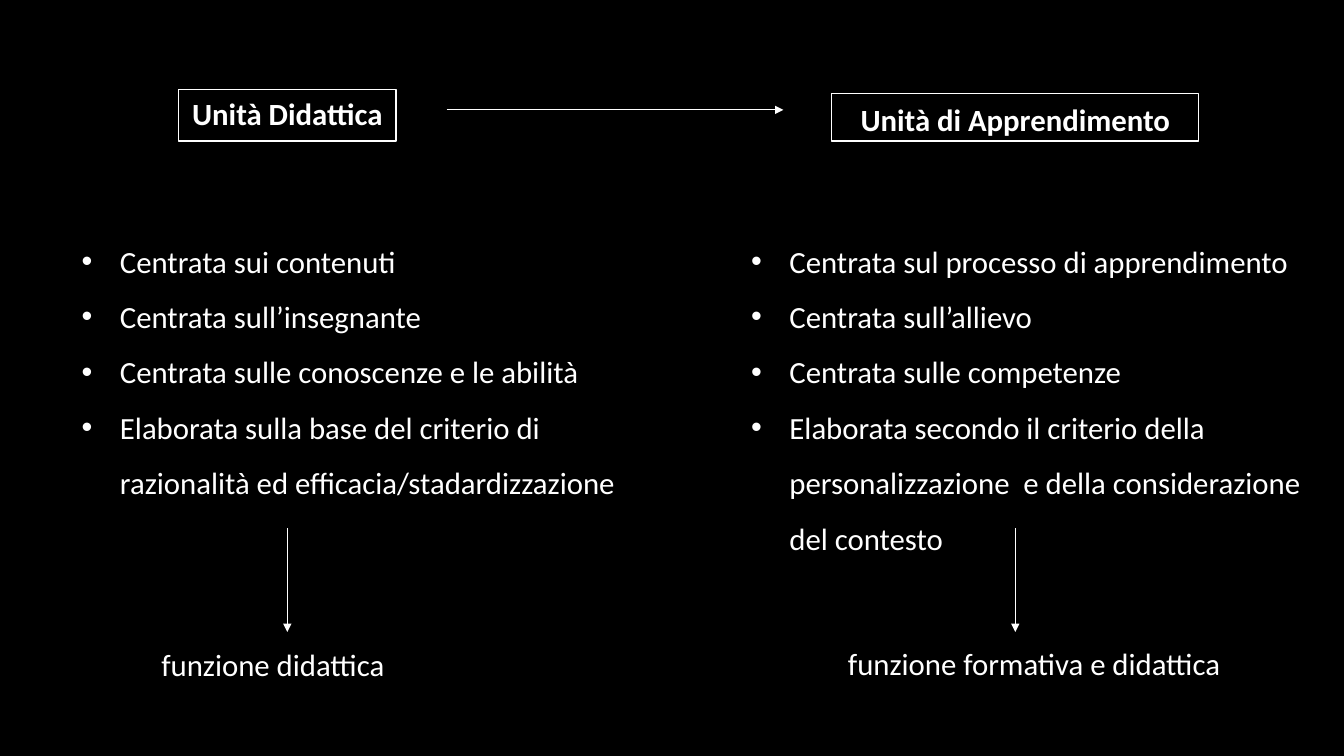
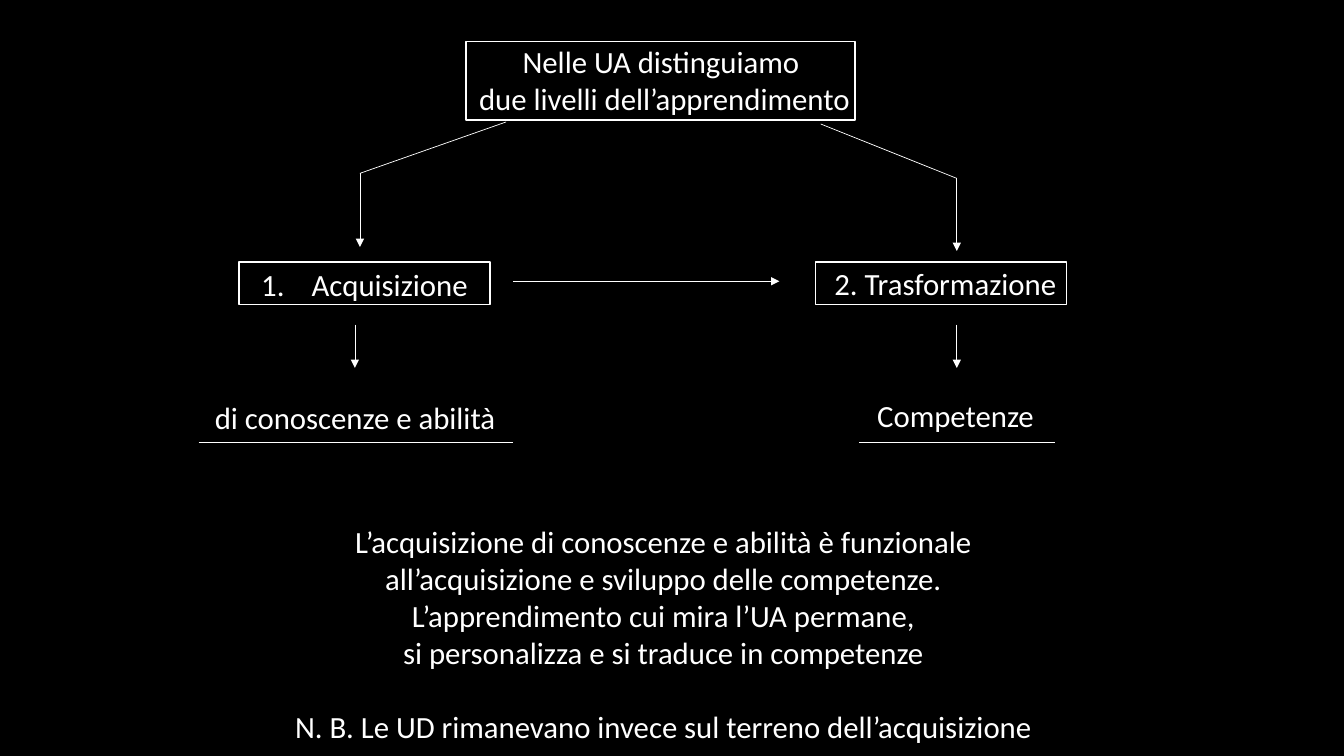
"""Build two slides comparing teaching units with learning units."""
from dataclasses import dataclass
from itertools import pairwise

from lxml.etree import SubElement
from pptx import Presentation
from pptx.dml.color import RGBColor
from pptx.enum.shapes import MSO_CONNECTOR
from pptx.enum.text import MSO_ANCHOR, MSO_AUTO_SIZE, PP_ALIGN
from pptx.oxml.ns import qn
from pptx.util import Inches, Pt


@dataclass(frozen=True)
class Theme:
    background: RGBColor = RGBColor(0, 0, 0)
    ink: RGBColor = RGBColor(255, 255, 255)
    font: str = "Calibri"
    size: float = 22
    frame_weight: float = 1
    line_weight: float = 0.5
    label_height: float = 0.37


THEME = Theme()
TITLE_ONLY, BLANK = 5, 6

UNITS = [
    {
        "heading": "Unità Didattica",
        "frame": (1.77, 0.89, 2.16, 0.51),
        "inset": (0, 0.05),
        "traits": [
            "Centrata sui contenuti",
            "Centrata sull’insegnante",
            "Centrata sulle conoscenze e le abilità",
            "Elaborata sulla base del criterio di razionalità ed efficacia/stadardizzazione",
        ],
        "traits_area": (0.81, 2.22, 5.32, 2.72),
        "purpose": "funzione didattica",
        "purpose_at": (1.6, 6.41, 2.3),
    },
    {
        "heading": "Unità di Apprendimento",
        "frame": (8.25, 0.93, 3.64, 0.47),
        "inset": (0, 0.07),
        "traits": [
            "Centrata sul processo di apprendimento",
            "Centrata sull’allievo",
            "Centrata sulle competenze",
            "Elaborata secondo il criterio della personalizzazione  e della considerazione del contesto",
        ],
        "traits_area": (7.45, 2.22, 5.78, 3.28),
        "purpose": "funzione formativa e didattica",
        "purpose_at": (8.41, 6.4, 3.8),
    },
]
UNIT_ARROW = [(4.43, 1.09), (7.77, 1.09)]
PURPOSE_ARROW_SPAN = (5.24, 6.27)

LEVELS_TITLE = ["Nelle UA distinguiamo ", "due livelli dell’apprendimento"]
LEVELS_TITLE_FRAME = (4.62, 0.41, 3.86, 0.78)
LEVELS = [
    {
        "name": "Acquisizione",
        "numbered": True,
        "frame_left": 2.37,
        "inset": (0, 0.04),
        "branch": [(5.02, 1.21), (3.57, 1.72), (3.57, 2.45)],
        "arrow_x": 3.52,
        "outcome": "di conoscenze e abilità",
        "outcome_at": (2.13, 3.96, 2.81),
        "underline": (1.97, 5.09),
    },
    {
        "name": "2. Trasformazione",
        "numbered": False,
        "frame_left": 8.09,
        "inset": (0.08, 0.03),
        "branch": [(8.14, 1.23), (9.49, 1.77), (9.49, 2.49)],
        "arrow_x": 9.49,
        "outcome": "Competenze",
        "outcome_at": (8.7, 3.94, 1.58),
        "underline": (8.52, 10.46),
    },
]
LEVEL_TOP, LEVEL_SIZE = 2.6, (2.49, 0.42)
LEVEL_ARROW = [(5.09, 2.79), (7.73, 2.79)]
OUTCOME_ARROW_SPAN = (3.22, 3.65)
UNDERLINE_Y = 4.39
CONCLUSION = [
    "L’acquisizione di conoscenze e abilità è funzionale",
    "all’acquisizione e sviluppo delle competenze.",
    "L’apprendimento cui mira l’UA permane,",
    "si personalizza e si traduce in competenze",
]
NOTE = "N. B. Le UD rimanevano invece sul terreno dell’acquisizione"
CONCLUSION_AREA = (0.96, 5.19, 11.24, 2.22)


def set_list_marker(paragraph, indent, tag, **attributes):
    properties = paragraph._p.get_or_add_pPr()
    properties.set("marL", str(Inches(indent)))
    properties.set("indent", str(-Inches(indent)))
    if tag == "a:buChar":
        SubElement(properties, qn("a:buFont")).set("typeface", "Arial")
    SubElement(properties, qn(tag), attributes)


def write_text(shape, lines, align=PP_ALIGN.LEFT, bold=False, inset=(0, 0)):
    frame = shape.text_frame
    frame.auto_size = MSO_AUTO_SIZE.NONE
    frame.word_wrap = True
    frame.vertical_anchor = MSO_ANCHOR.TOP
    frame.margin_left, frame.margin_top = map(Inches, inset)
    frame.margin_right = frame.margin_bottom = 0
    for index, line in enumerate(lines):
        paragraph = frame.add_paragraph() if index else frame.paragraphs[0]
        paragraph.alignment = align
        paragraph.line_spacing = 1.0
        paragraph.space_before = Pt(0)
        run = paragraph.add_run()
        run.text = line
        run.font.name = THEME.font
        run.font.size = Pt(THEME.size)
        run.font.bold = bold
        run.font.color.rgb = THEME.ink
    return frame.paragraphs


def add_text(slide, area, lines, **style):
    shape = slide.shapes.add_textbox(*map(Inches, area))
    return shape, write_text(shape, lines, **style)


def add_label(slide, position, text):
    add_text(slide, (*position, THEME.label_height), [text])


def draw_frame(shape):
    shape.line.color.rgb = THEME.ink
    shape.line.width = Pt(THEME.frame_weight)


def add_framed_text(slide, area, text, **style):
    shape, paragraphs = add_text(slide, area, [text], align=PP_ALIGN.CENTER, **style)
    draw_frame(shape)
    return paragraphs[0]


def add_line(slide, points, arrow=True):
    for start, end in pairwise(points):
        connector = slide.shapes.add_connector(
            MSO_CONNECTOR.STRAIGHT, *map(Inches, (*start, *end)))
        connector.line.color.rgb = THEME.ink
        connector.line.width = Pt(THEME.line_weight)
        SubElement(connector._element.spPr, qn("a:effectLst"))
        if arrow and end == points[-1]:
            SubElement(connector.line._get_or_add_ln(), qn("a:tailEnd")).set("type", "triangle")


def add_down_arrow(slide, x, span):
    add_line(slide, [(x, y) for y in span])


def build_comparison(presentation):
    slide = presentation.slides.add_slide(presentation.slide_layouts[BLANK])
    for unit in UNITS:
        left, _, width, _ = unit["frame"]
        add_framed_text(slide, unit["frame"], unit["heading"], bold=True, inset=unit["inset"])
        _, paragraphs = add_text(slide, unit["traits_area"], unit["traits"])
        for paragraph in paragraphs:
            paragraph.line_spacing = 1.5
            set_list_marker(paragraph, 0.38, "a:buChar", char="•")
        add_down_arrow(slide, left + width / 2, PURPOSE_ARROW_SPAN)
        add_label(slide, unit["purpose_at"], unit["purpose"])
    add_line(slide, UNIT_ARROW)


def build_levels(presentation):
    slide = presentation.slides.add_slide(presentation.slide_layouts[TITLE_ONLY])
    title = slide.shapes.title
    title.left, title.top, title.width, title.height = map(Inches, LEVELS_TITLE_FRAME)
    write_text(title, LEVELS_TITLE, align=PP_ALIGN.CENTER, inset=(0.08, 0.01))
    draw_frame(title)
    for level in LEVELS:
        area = (level["frame_left"], LEVEL_TOP, *LEVEL_SIZE)
        paragraph = add_framed_text(slide, area, level["name"], inset=level["inset"])
        if level["numbered"]:
            set_list_marker(paragraph, 0.5, "a:buAutoNum", type="arabicPeriod")
        add_line(slide, level["branch"])
        add_down_arrow(slide, level["arrow_x"], OUTCOME_ARROW_SPAN)
        add_label(slide, level["outcome_at"], level["outcome"])
        add_line(slide, [(x, UNDERLINE_Y) for x in level["underline"]], arrow=False)
    add_line(slide, LEVEL_ARROW)
    _, paragraphs = add_text(
        slide, CONCLUSION_AREA, [*CONCLUSION, NOTE], align=PP_ALIGN.CENTER)
    paragraphs[-1].space_before = Pt(THEME.size * 1.2)


def main():
    presentation = Presentation()
    presentation.slide_width = Inches(13.33)
    presentation.slide_height = Inches(7.5)
    background = presentation.slide_master.background.fill
    background.solid()
    background.fore_color.rgb = THEME.background
    build_comparison(presentation)
    build_levels(presentation)
    presentation.save("out.pptx")


if __name__ == "__main__":
    main()
